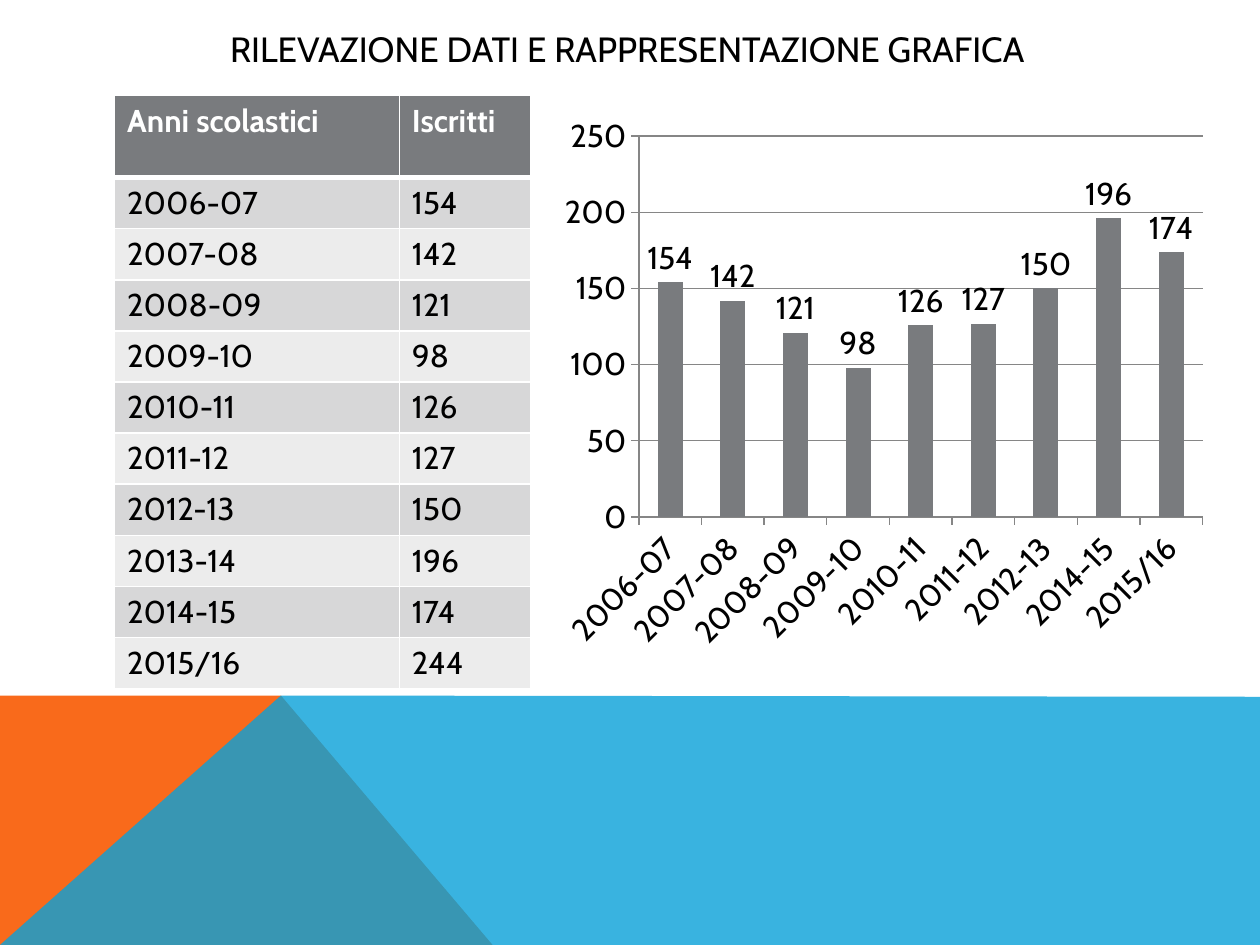
from lxml import etree
from pptx import Presentation
from pptx.chart.data import CategoryChartData
from pptx.dml.color import RGBColor
from pptx.enum.chart import XL_CHART_TYPE, XL_LABEL_POSITION, XL_TICK_MARK
from pptx.enum.text import MSO_ANCHOR, PP_ALIGN
from pptx.oxml.ns import qn
from pptx.util import Inches, Pt

COLUMN = XL_CHART_TYPE.COLUMN_CLUSTERED
ABOVE = XL_LABEL_POSITION.OUTSIDE_END
TICK_OUT, TICK_NONE = XL_TICK_MARK.OUTSIDE, XL_TICK_MARK.NONE
CENTER, MIDDLE = PP_ALIGN.CENTER, MSO_ANCHOR.MIDDLE

FONT = "Cabin"
BLACK = RGBColor(0x00, 0x00, 0x00)
WHITE = RGBColor(0xFF, 0xFF, 0xFF)
GRAY = RGBColor(0x79, 0x7B, 0x7E)
RULE = RGBColor(0x86, 0x86, 0x86)
BANDS = (RGBColor(0xD7, 0xD7, 0xD8), RGBColor(0xEC, 0xEC, 0xEC))
ORANGE = RGBColor(0xF9, 0x6A, 0x1B)
BLUE = RGBColor(0x08, 0xA1, 0xD9)

TITLE = "RILEVAZIONE DATI E RAPPRESENTAZIONE GRAFICA"
HEAD = ("Anni scolastici", "Iscritti")
ROWS = [
    ("2006-07", 154), ("2007-08", 142), ("2008-09", 121), ("2009-10", 98),
    ("2010-11", 126), ("2011-12", 127), ("2012-13", 150), ("2013-14", 196),
    ("2014-15", 174), ("2015/16", 244),
]
BARS = ROWS[:7] + [("2014-15", 196), ("2015/16", 174)]
WEDGES = [
    ([(0, 7.5), (0, 5.52), (2.23, 5.52), (3.91, 7.5)], ORANGE, 100),
    ([(0, 7.5), (2.23, 5.52), (10, 5.53), (10, 7.5)], BLUE, 80),
]
COLS = (2.26, 1.04)
HEAD_H, ROW_H = 0.65, 0.4


def add_run(para, text, size, color, bold=False):
    run = para.add_run()
    run.text = text
    font = run.font
    font.name, font.size, font.bold = FONT, Pt(size), bold
    font.color.rgb = color


def add_wedge(slide, points, color, alpha):
    points = [(Inches(x), Inches(y)) for x, y in points]
    path = slide.shapes.build_freeform(*points[0])
    path.add_line_segments(points[1:], close=True)
    shape = path.convert_to_shape()
    shape.shadow.inherit = False
    shape.line.fill.background()
    shape.fill.solid()
    shape.fill.fore_color.rgb = color
    if alpha < 100:
        tone = shape._element.spPr.find(qn("a:solidFill"))[0]
        etree.SubElement(tone, qn("a:alpha"), val=str(alpha * 1000))


def add_edges(cell, base):
    props = cell._tc.get_or_add_tcPr()
    widths = {"lnL": 1, "lnR": 1, "lnT": 1, "lnB": base}
    for spot, (tag, width) in enumerate(widths.items()):
        line = etree.Element(qn("a:" + tag), w=str(Pt(width)))
        fill = etree.SubElement(line, qn("a:solidFill"))
        etree.SubElement(fill, qn("a:srgbClr"), val=str(WHITE))
        props.insert(spot, line)


def add_grid(slide):
    frame = slide.shapes.add_table(
        len(ROWS) + 1, len(COLS), Inches(0.91), Inches(0.76),
        Inches(sum(COLS)), Inches(HEAD_H + ROW_H * len(ROWS)))
    table = frame.table
    for col, width in zip(table.columns, COLS):
        col.width = Inches(width)
    for r, values in enumerate([HEAD] + ROWS):
        top = r == 0
        table.rows[r].height = Inches(HEAD_H if top else ROW_H)
        for c, value in enumerate(values):
            cell = table.cell(r, c)
            cell.fill.solid()
            cell.fill.fore_color.rgb = GRAY if top else BANDS[(r - 1) % 2]
            add_run(cell.text_frame.paragraphs[0], str(value), 18,
                    WHITE if top else BLACK, top)
            add_edges(cell, 3 if top else 1)


def add_bars(slide):
    data = CategoryChartData()
    data.categories = [year for year, _ in BARS]
    data.add_series("Series 1", [count for _, count in BARS])
    chart = slide.shapes.add_chart(
        COLUMN, Inches(4.37), Inches(0.84), Inches(5.28), Inches(4.42),
        data).chart
    chart.has_legend = chart.has_title = False
    chart.font.name, chart.font.size = FONT, Pt(18)
    chart.font.color.rgb = BLACK

    years, counts = chart.category_axis, chart.value_axis
    counts.minimum_scale, counts.maximum_scale = 0, 250
    counts.major_unit = 50
    counts.has_major_gridlines = True
    for axis in (years, counts):
        axis.major_tick_mark, axis.minor_tick_mark = TICK_OUT, TICK_NONE
    for rule in (years, counts, counts.major_gridlines):
        rule.format.line.color.rgb = RULE
        rule.format.line.width = Pt(0.75)
    years._element.get_or_add_txPr().bodyPr.set("rot", "-2700000")

    plot = chart.plots[0]
    plot.gap_width, plot.vary_by_categories = 150, False
    fill = plot.series[0].format.fill
    fill.solid()
    fill.fore_color.rgb = GRAY
    plot.has_data_labels = True
    labels = plot.data_labels
    labels.show_value, labels.position = True, ABOVE
    labels.font.name, labels.font.size = FONT, Pt(18)
    labels.font.color.rgb = BLACK


def add_title(slide):
    box = slide.shapes.add_textbox(
        Inches(0.91), Inches(0.09), Inches(8.14), Inches(0.59))
    frame = box.text_frame
    frame.word_wrap, frame.vertical_anchor = True, MIDDLE
    para = frame.paragraphs[0]
    para.alignment = CENTER
    add_run(para, TITLE, 20, BLACK)


def main():
    deck = Presentation()
    deck.slide_width, deck.slide_height = Inches(10), Inches(7.5)
    slide = deck.slides.add_slide(deck.slide_layouts[6])
    for wedge in WEDGES:
        add_wedge(slide, *wedge)
    add_grid(slide)
    add_bars(slide)
    add_title(slide)
    deck.save("out.pptx")


if __name__ == "__main__":
    main()
